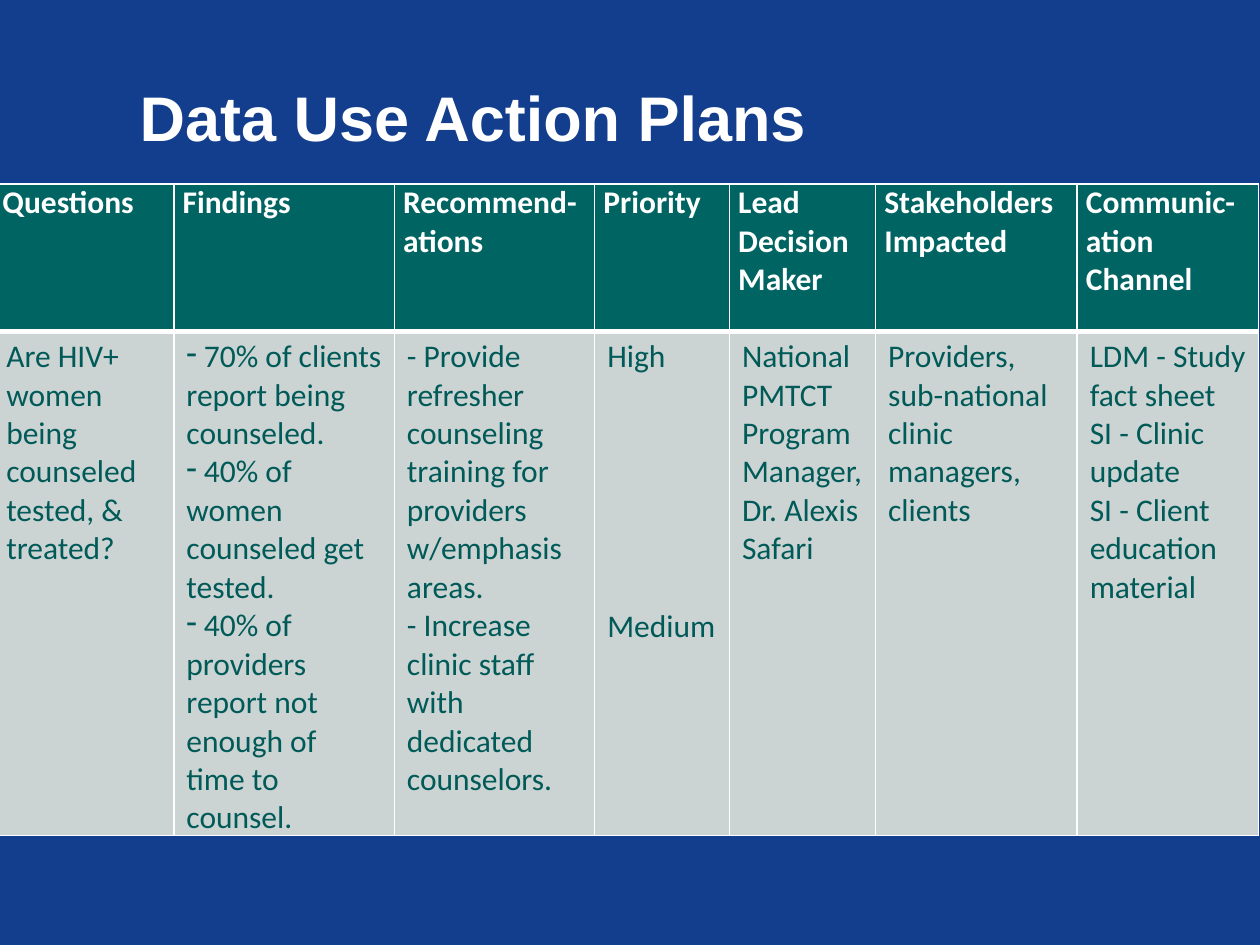
from lxml import etree
from pptx import Presentation
from pptx.dml.color import RGBColor
from pptx.enum import text
from pptx.oxml import ns
from pptx.util import Inches, Pt

BLUE = RGBColor(0x13, 0x3D, 0x8D)
WHITE = RGBColor(0xFF, 0xFF, 0xFF)
TEAL = RGBColor(0x00, 0x64, 0x62)
DARK_TEAL = RGBColor(0x00, 0x5A, 0x58)
GREY = RGBColor(0xCC, 0xD3, 0xD3)

COLUMNS = [
    # heading, width, body paragraphs
    ("Questions", 1.43, ["Are HIV+ women being counseled tested, & treated?"]),
    ("Findings", 1.75, [
        " 70% of clients report being counseled.",
        " 40% of women counseled get tested.",
        " 40% of providers report not enough of time to counsel."]),
    ("Recommend-ations", 1.59, [
        "- Provide refresher counseling training for providers w/emphasis areas.",
        "- Increase clinic staff with dedicated counselors."]),
    ("Priority", 1.07, ["High", "Medium"]),
    ("Lead Decision Maker", 1.16, [
        "National PMTCT Program Manager,", "Dr. Alexis Safari"]),
    ("Stakeholders Impacted", 1.6, [
        "Providers, sub-national clinic managers, clients"]),
    ("Communic-ation Channel", 1.44, [
        "LDM - Study fact sheet", "SI - Clinic update",
        "SI - Client education material"]),
]
HEADER_FONT = {"name": "Calibri", "size": Pt(18), "bold": True}
BODY_FONT = {**HEADER_FONT, "bold": False}
TITLE_FONT = {"name": "Arial", "size": Pt(36), "bold": True}
HEADER_MARGINS = {"margin_left": Inches(0.07), "margin_right": Inches(0.07),
                  "margin_top": 0, "margin_bottom": 0}


def write(para, words, font, color):
    span = para.add_run()
    span.text = words
    for name, value in font.items():
        setattr(span.font, name, value)
    span.font.color.rgb = color


def style_cell(cell, fill, bottom_width):
    """Give the cell white borders and a solid fill; borders must come first in the XML."""
    properties = cell._tc.get_or_add_tcPr()
    for side in "LRTB":
        width = Pt(bottom_width if side == "B" else 1)
        line = etree.SubElement(properties, ns.qn(f"a:ln{side}"), w=str(width))
        solid = etree.SubElement(line, ns.qn("a:solidFill"))
        etree.SubElement(solid, ns.qn("a:srgbClr"), val=str(WHITE))
    cell.fill.solid()
    cell.fill.fore_color.rgb = fill


deck = Presentation()
deck.slide_width, deck.slide_height = Inches(10), Inches(7.5)
page = deck.slides.add_slide(deck.slide_layouts[6])
page.background.fill.solid()
page.background.fill.fore_color.rgb = BLUE

title = page.shapes.add_textbox(Inches(1.01), Inches(0.3), Inches(8.49), Inches(1.25))
title.text_frame.word_wrap = True
title.text_frame.vertical_anchor = text.MSO_ANCHOR.MIDDLE
write(title.text_frame.paragraphs[0], "Data Use Action Plans", TITLE_FONT, WHITE)

plan = page.shapes.add_table(2, len(COLUMNS), Inches(-0.05), Inches(1.46),
                             Inches(10.05), Inches(5.17)).table
plan.horz_banding = False
plan.rows[0].height, plan.rows[1].height = Inches(1.17), Inches(4)

for index, (heading, width, entries) in enumerate(COLUMNS):
    plan.columns[index].width = Inches(width)

    header = plan.cell(0, index)
    style_cell(header, TEAL, bottom_width=3)
    for name, value in HEADER_MARGINS.items():
        setattr(header, name, value)
    write(header.text_frame.paragraphs[0], heading, HEADER_FONT, WHITE)

    body = plan.cell(1, index)
    style_cell(body, GREY, bottom_width=1)
    frame = body.text_frame
    for number, entry in enumerate(entries):
        para = frame.add_paragraph() if number else frame.paragraphs[0]
        if heading == "Findings":
            bullet_properties = para._p.get_or_add_pPr()
            bullet_properties.set("marL", "0")
            bullet_properties.set("indent", "0")
            etree.SubElement(bullet_properties, ns.qn("a:buChar"), char="-")
        if entry == "Medium":
            # Lines up with the second recommendation, six lines lower
            para.space_before = Pt(132)
        write(para, entry, BODY_FONT, DARK_TEAL)

deck.save("out.pptx")
